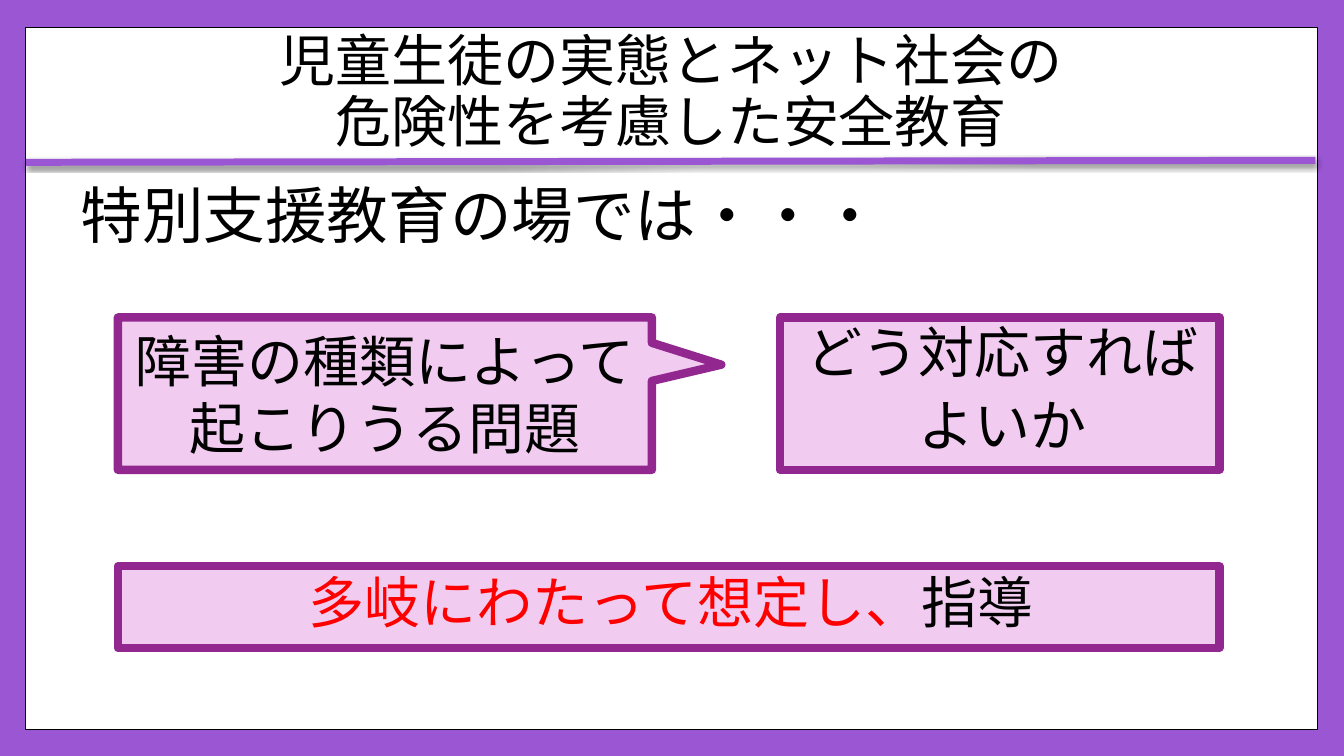
"""Build the slide on online safety education in special needs classes."""
from dataclasses import dataclass
from typing import Any

from lxml.etree import SubElement
from pptx import Presentation
from pptx.dml.color import RGBColor as RGB
from pptx.enum.shapes import MSO_CONNECTOR as CONN, MSO_SHAPE as SHAPE
from pptx.enum.text import MSO_ANCHOR as ANCHOR, MSO_AUTO_SIZE as FIT, PP_ALIGN as ALIGN
from pptx.oxml.ns import qn
from pptx.util import Cm, Pt


@dataclass(frozen=True)
class Theme:
    purple: RGB = RGB.from_string("9B57D3")
    pink: RGB = RGB.from_string("F1CCF0")
    plum: RGB = RGB.from_string("92278F")
    black: RGB = RGB.from_string("000000")
    white: RGB = RGB.from_string("FFFFFF")
    red: RGB = RGB.from_string("FF0000")
    title_font: str = "Cabin"
    body_font: str = "Arial"
    large: int = 44
    normal: int = 40
    border: int = 6
    rule: int = 5


T = Theme()


@dataclass(frozen=True)
class Run:
    text: str
    color: RGB = T.black


@dataclass(frozen=True)
class Box:
    place: tuple[float, float, float, float]
    paragraphs: tuple[tuple[Run, ...], ...]
    kind: SHAPE = SHAPE.RECTANGLE
    adjustments: tuple[float, ...] = ()
    spacing: float = 0.8
    indent: float = 0.13


LEFT, TOP, HEIGHT = 2.97, 8, 3.84
BOXES = (
    Box((19.66, TOP, 11.07, HEIGHT), ((Run("どう対応すれば"),), (Run("よいか"),))),
    Box((LEFT, 14.27, 27.76, 2.06), ((Run("多岐にわたって想定し、", T.red), Run("指導")),)),
    Box((LEFT, TOP, 13.46, HEIGHT), ((Run("障害の種類によって起こりうる問題"),),),
        SHAPE.RECTANGULAR_CALLOUT, (0.63, -0.19), 1, 0),
)


def apply(target: Any, values: dict[str, Any]) -> None:
    for name, value in values.items():
        setattr(target, name, value)


def write(tf: Any, paragraphs: tuple[tuple[Run, ...], ...], size: int, font: str,
          align: ALIGN, spacing: float, indent: float, anchor: ANCHOR) -> None:
    apply(tf, {"word_wrap": True, "auto_size": FIT.NONE, "vertical_anchor": anchor})
    for i, runs in enumerate(paragraphs):
        p = tf.add_paragraph() if i else tf.paragraphs[0]
        apply(p, {"alignment": align, "line_spacing": spacing, "space_before": Pt(14 if i else 0)})
        if indent:
            pPr = p._p.get_or_add_pPr()
            pPr.set("marL", str(Cm(indent)))
            pPr.set("indent", "0")
        for run in runs:
            for j, part in enumerate(run.text.split("\n")):
                if j:
                    p.add_line_break()
                r = p.add_run()
                r.text = part
                apply(r.font, {"size": Pt(size), "name": font})
                r.font.color.rgb = run.color


def add_panel(s: Any, kind: SHAPE, place: tuple[float, ...], fill: RGB, line: RGB, width: float) -> Any:
    sp = s.shapes.add_shape(kind, *map(Cm, place))
    sp.shadow.inherit = False
    sp.fill.solid()
    sp.fill.fore_color.rgb = fill
    sp.line.color.rgb = line
    sp.line.width = Pt(width)
    return sp


def add_box(s: Any, box: Box) -> None:
    sp = add_panel(s, box.kind, box.place, T.pink, T.plum, T.border)
    for i, value in enumerate(box.adjustments):
        sp.adjustments[i] = value
    SubElement(sp.line._get_or_add_ln(), qn("a:round"))
    write(sp.text_frame, box.paragraphs, T.normal, T.body_font, ALIGN.CENTER,
          box.spacing, box.indent, ANCHOR.MIDDLE)


def add_rule(s: Any) -> None:
    cx = s.shapes.add_connector(CONN.STRAIGHT, Cm(0.66), Cm(4.09), Cm(33.15), Cm(4.04))
    cx.line.color.rgb = T.purple
    cx.line.width = Pt(T.rule)
    effects = SubElement(cx._element.spPr, qn("a:effectLst"))
    shadow = SubElement(effects, qn("a:outerShdw"), blurRad=str(Pt(3)), dist=str(Pt(2)),
                        dir="5400000", rotWithShape="0")
    color = SubElement(shadow, qn("a:srgbClr"), val=str(T.black))
    SubElement(color, qn("a:alpha"), val="45000")


def add_title(s: Any, text: str) -> None:
    sp = s.shapes.title
    s.shapes.element.append(sp._element)
    apply(sp, {"left": Cm(0.66), "top": Cm(0.91), "width": Cm(32.51), "height": Cm(2.9)})
    write(sp.text_frame, ((Run(text),),), T.normal, T.title_font, ALIGN.CENTER, 0.9, 0, ANCHOR.MIDDLE)


def add_lead(s: Any, text: str) -> None:
    sp = s.shapes.add_textbox(Cm(1.65), Cm(4.55), Cm(30.48), Cm(13.56))
    write(sp.text_frame, ((Run(text),),), T.large, T.body_font, ALIGN.LEFT, 0.9, 0.13, ANCHOR.TOP)


def main() -> None:
    prs = Presentation()
    apply(prs, {"slide_width": Cm(33.87), "slide_height": Cm(19.05)})
    s = prs.slides.add_slide(prs.slide_layouts.get_by_name("Title Only"))
    s.background.fill.solid()
    s.background.fill.fore_color.rgb = T.purple
    add_panel(s, SHAPE.RECTANGLE, (0.64, 0.69, 32.56, 17.7), T.white, T.black, 1)
    add_rule(s)
    add_title(s, "児童生徒の実態とネット社会の\n危険性を考慮した安全教育")
    add_lead(s, "特別支援教育の場では・・・")
    for box in BOXES:
        add_box(s, box)
    prs.save("out.pptx")


if __name__ == "__main__":
    main()
